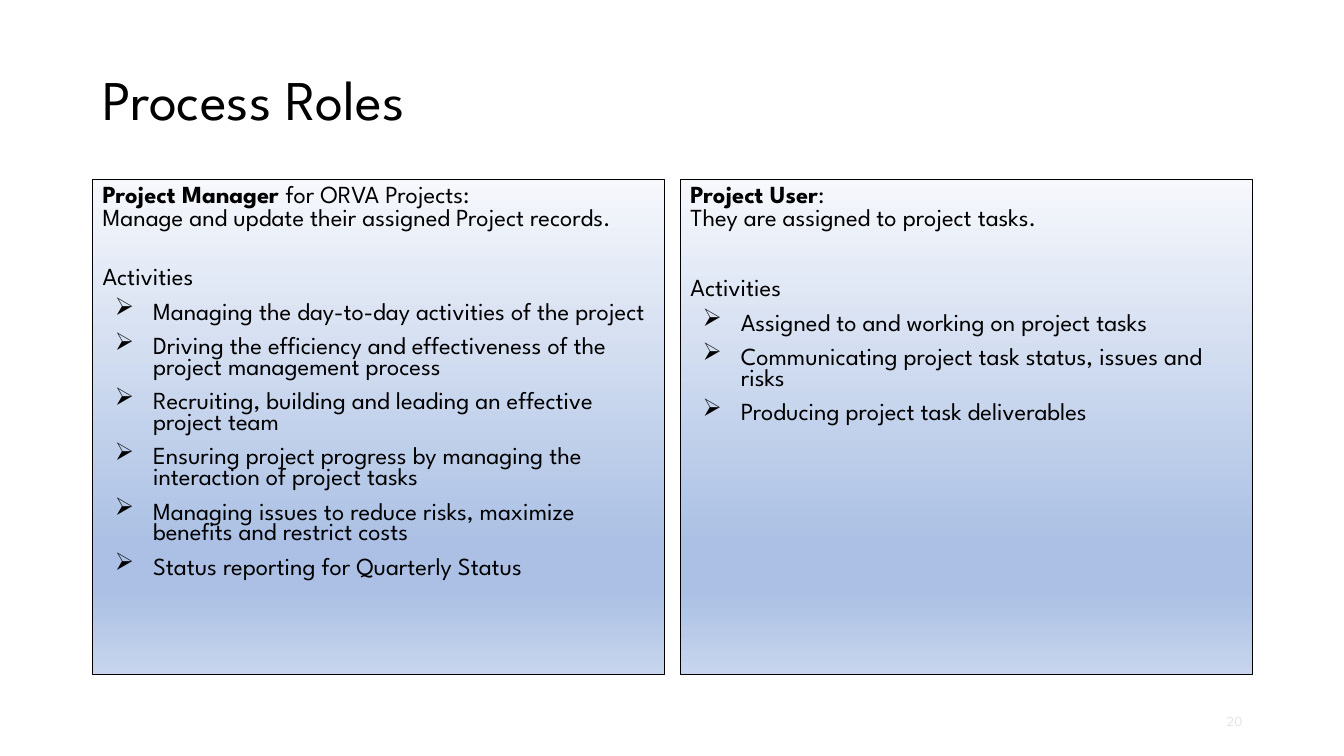
from copy import deepcopy
from lxml import etree
from pptx import Presentation, util as u
from pptx.dml.color import RGBColor
from pptx.enum import text
from pptx.oxml import ns

deck = Presentation()
deck.slide_width, deck.slide_height = u.Inches(13.33), u.Inches(7.5)
slide = deck.slides.add_slide(deck.slide_layouts[6])


def style(para, size, color="000000"):
    para.font.name = "League Spartan"
    para.font.size = u.Pt(size)
    para.font.color.rgb = RGBColor.from_string(color)


def add_box(left, top, width, height, anchor):
    box = slide.shapes.add_textbox(*map(u.Inches, (left, top, width, height)))
    box.text_frame.word_wrap = True
    box.text_frame.vertical_anchor = anchor
    return box


left, wide, pitch = 0.92, 5.67, 5.83
middle, top = text.MSO_ANCHOR.MIDDLE, text.MSO_ANCHOR.TOP

title = add_box(left, 0.4, 11.5, 1.24, middle).text_frame.paragraphs[0]
title.text = "Process Roles"
title.line_spacing = 0.9
style(title, 40)

stops = [(0, "F6F8FC"), (0.74, "ABC0E4"), (0.83, "ABC0E4"), (1, "C7D5ED")]
roles = [
    ("Project Manager ", "for ORVA Projects:",
     "Manage and update their assigned Project records.", 27,
     ["Managing the day-to-day activities of the project",
      "Driving the efficiency and effectiveness of the project management process",
      "Recruiting, building and leading an effective project team",
      "Ensuring project progress by managing the interaction of project tasks",
      "Managing issues to reduce risks, maximize benefits and restrict costs",
      "Status reporting for Quarterly Status"]),
    ("Project User", ":", "They are assigned to project tasks.", 34.8,
     ["Assigned to and working on project tasks",
      "Communicating project task status, issues and risks",
      "Producing project task deliverables"]),
]

for col, (role, rest, duty, gap, tasks) in enumerate(roles):
    box = add_box(left + col * pitch, 1.78, wide, 4.91, top)
    box.line.color.rgb = RGBColor.from_string("000000")
    box.line.width = u.Pt(0.75)
    box.fill.gradient()
    box.fill.gradient_angle = 270
    ramp = next(box._element.iter(ns.qn("a:gsLst")))
    for stop in list(ramp):
        ramp.append(deepcopy(stop))
    for stop, (place, color) in zip(box.fill.gradient_stops, stops):
        stop.position = place
        stop.color.rgb = RGBColor.from_string(color)

    frame = box.text_frame
    head = frame.paragraphs[0]
    name = head.add_run()
    name.text = role
    name.font.bold = True
    head.add_run().text = rest
    head.line_spacing = 0.8
    style(head, 17.5)

    lines = [(duty, 0.8, 0, False), ("Activities", 0.7, gap, False)]
    lines += [(task, 0.7, 10, True) for task in tasks]
    for words, space, before, mark in lines:
        para = frame.add_paragraph()
        para.text = words
        para.line_spacing = space
        para.space_before = u.Pt(before)
        if mark:
            props = para._p.get_or_add_pPr()
            props.set("marL", str(u.Inches(0.5)))
            props.set("indent", str(u.Inches(-0.38)))
            etree.SubElement(props, ns.qn("a:buChar")).set("char", "➢")
        style(para, 17.5)

page = add_box(9.42, 6.95, 3, 0.4, middle).text_frame.paragraphs[0]
page.text = "20"
page.alignment = text.PP_ALIGN.RIGHT
style(page, 10, "E5E5E5")

deck.save("out.pptx")
